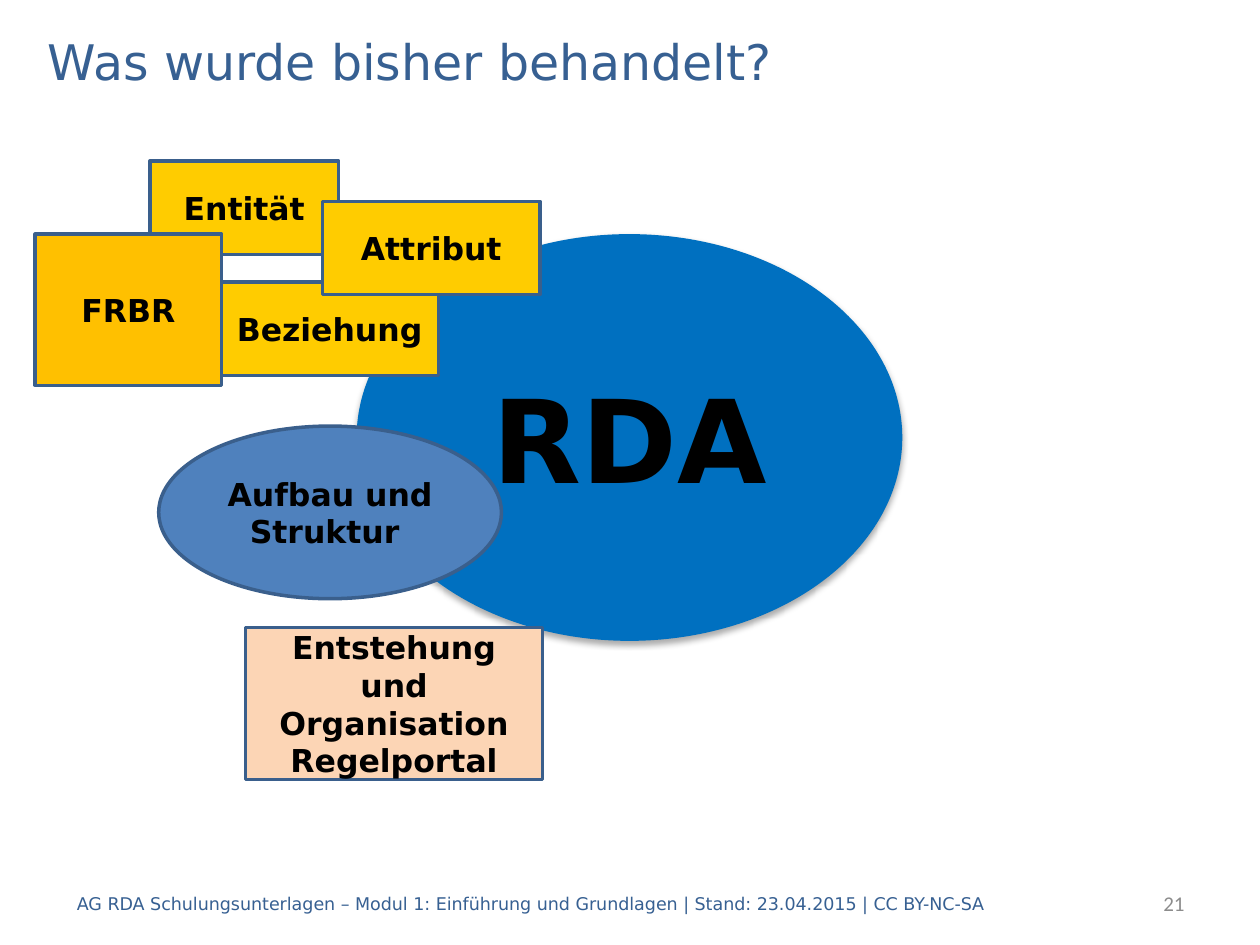
from lxml.etree import SubElement
from pptx import Presentation
from pptx.dml.color import RGBColor
from pptx.enum.shapes import MSO_SHAPE
from pptx.enum.text import MSO_ANCHOR, MSO_AUTO_SIZE, PP_ALIGN
from pptx.oxml.ns import qn
from pptx.util import Cm, Pt

THEME = {
    "font": "DejaVu Sans", "number_font": "Calibri",
    "heading": "376092", "muted": "8C8C8C", "text": "000000", "outline": "3A5F8C",
    "core": "0070C0", "structure": "4F81BD", "concept": "FFCC00",
    "model": "FFC000", "origin": "FCD5B5",
    "title_size": 28, "core_size": 66, "topic_size": 18,
    "number_size": 12, "footer_size": 10, "outline_width": 2,
}

TITLE = "Was wurde bisher behandelt?"
FOOTER = ("AG RDA Schulungsunterlagen – Modul 1: Einführung und Grundlagen"
          " | Stand: 23.04.2015 | CC BY-NC-SA")
PAGE_NUMBER = "21"

TITLE_AREA = (0.71, 0.51, 24, 1.42)
NUMBER_AREA = (20.09, 17.7, 4.04, 1.02)
FOOTER_AREA = (1.3, 17.7, 19.61, 1.02)

CORE = ("RDA", MSO_SHAPE.OVAL, "core", (7.19, 4.72, 11, 8.2))
TOPICS = [
    ("Aufbau und Struktur ", MSO_SHAPE.OVAL, "structure", (3.2, 8.59, 6.91, 3.48)),
    ("Entität", MSO_SHAPE.RECTANGLE, "concept", (3.02, 3.25, 3.81, 1.88)),
    ("Beziehung", MSO_SHAPE.RECTANGLE, "concept", (4.45, 5.69, 4.39, 1.88)),
    ("Attribut", MSO_SHAPE.RECTANGLE, "concept", (6.5, 4.06, 4.39, 1.88)),
    ("Entstehung und Organisation\nRegelportal", MSO_SHAPE.RECTANGLE, "origin",
     (4.95, 12.65, 5.99, 3.07)),
    ("FRBR", MSO_SHAPE.RECTANGLE, "model", (0.71, 4.72, 3.76, 3.05)),
]


def color(name):
    return RGBColor.from_string(THEME[name])


def area_lengths(area):
    return [Cm(value) for value in area]


def write_text(box, text, size, ink="text", font="font", bold=False, align=PP_ALIGN.LEFT):
    frame = box.text_frame
    frame.word_wrap = True
    frame.auto_size = MSO_AUTO_SIZE.NONE
    frame.vertical_anchor = MSO_ANCHOR.MIDDLE
    frame.text = text
    for para in frame.paragraphs:
        para.alignment = align
        for span in para.runs:
            span.font.name = THEME[font]
            span.font.size = Pt(THEME[size])
            span.font.bold = bold
            span.font.color.rgb = color(ink)


def add_topic(page, text, kind, fill, area, size="topic_size", outlined=True):
    shape = page.shapes.add_shape(kind, *area_lengths(area))
    shape.shadow.inherit = False
    shape.fill.solid()
    shape.fill.fore_color.rgb = color(fill)
    if outlined:
        shape.line.color.rgb = color("outline")
        shape.line.width = Pt(THEME["outline_width"])
    else:
        shape.line.fill.background()
    write_text(shape, text, size, bold=True, align=PP_ALIGN.CENTER)
    return shape


def add_shadow(shape):
    effects = shape._element.spPr.find(qn("a:effectLst"))
    shadow = SubElement(effects, qn("a:outerShdw"), blurRad=str(Pt(3.5)),
                        dist=str(Pt(2.2)), dir="5400000", rotWithShape="0")
    tint = SubElement(shadow, qn("a:srgbClr"), val="000000")
    SubElement(tint, qn("a:alpha"), val="32000")


def main():
    deck = Presentation()
    deck.slide_width, deck.slide_height = Cm(25.4), Cm(19.05)
    page = deck.slides.add_slide(deck.slide_layouts[5])

    title = page.shapes.title
    title.left, title.top, title.width, title.height = area_lengths(TITLE_AREA)
    write_text(title, TITLE, "title_size", ink="heading")

    number = page.shapes.add_textbox(*area_lengths(NUMBER_AREA))
    write_text(number, PAGE_NUMBER, "number_size", ink="muted", font="number_font",
               align=PP_ALIGN.RIGHT)
    footer = page.shapes.add_textbox(*area_lengths(FOOTER_AREA))
    write_text(footer, FOOTER, "footer_size", ink="heading")

    add_shadow(add_topic(page, *CORE, size="core_size", outlined=False))
    for topic in TOPICS:
        add_topic(page, *topic)

    deck.save("out.pptx")


if __name__ == "__main__":
    main()
